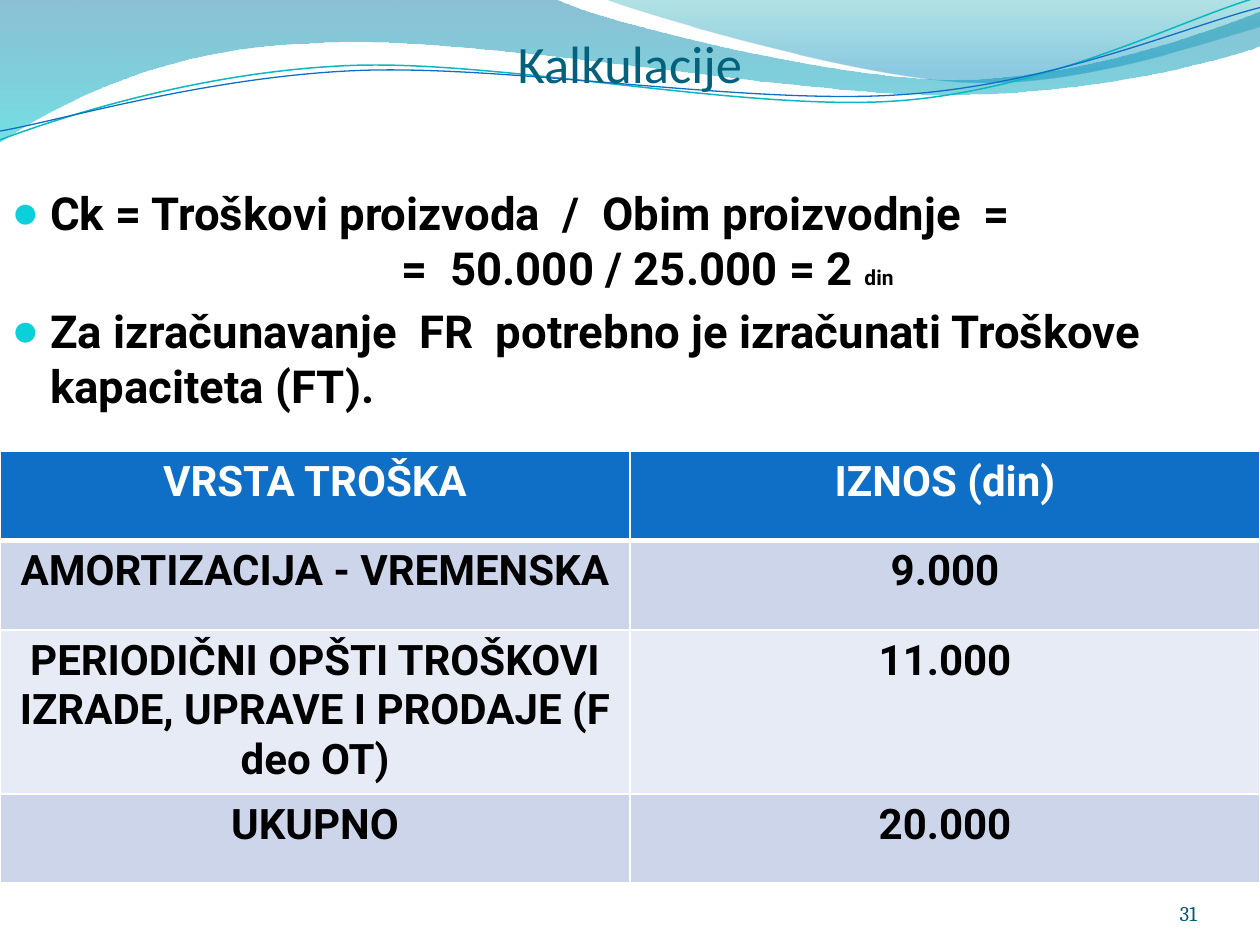
from math import cos, radians, sin

from lxml.etree import SubElement
from pptx import Presentation
from pptx.dml.color import RGBColor
from pptx.enum.text import MSO_ANCHOR, PP_ALIGN
from pptx.oxml.ns import qn
from pptx.util import Inches, Pt

UPPER_WAVE = [
    (0, 0), (4.4, -0.01),
    (4.76, 0.17, 6.64, 0.63, 7.58, 0.63), (8.53, 0.63, 9.58, 0.26, 10, 0.09),
    (10.01, 0.36),
    (9.83, 0.44, 8.7, 0.76, 7.46, 0.75), (6.22, 0.75, 3.82, 0.28, 2.57, 0.34),
    (1.29, 0.36, 0.46, 0.83, -0.01, 1.13),
]
RIGHT_WAVE = [
    (4.79, -0.01), (5.09, 0.11, 6.82, 0.62, 7.69, 0.65),
    (8.56, 0.69, 9.61, 0.32, 10, 0.21), (10, 0),
]
TEAL_STRAND = [
    (0, 1.11), (0.48, 0.93, 1.58, 0.57, 2.77, 0.52),
    (3.95, 0.47, 5.93, 0.89, 7.13, 0.8), (8.33, 0.71, 9.38, 0.15, 9.98, -0.02),
]
BLUE_STRAND = [
    (0, 1.04), (0.47, 0.96, 1.64, 0.61, 2.83, 0.56),
    (4.03, 0.51, 5.97, 0.84, 7.17, 0.75), (8.36, 0.67, 9.41, 0.21, 10, 0.06),
]
STRAND_CENTER = (4.99, 0.58)
STRAND_TILT = 2.7
COSTS = [
    ("VRSTA TROŠKA", "IZNOS (din)"),
    ("AMORTIZACIJA - VREMENSKA", "9.000"),
    ("PERIODIČNI OPŠTI TROŠKOVI IZRADE, UPRAVE I PRODAJE (F deo OT)", "11.000"),
    ("UKUPNO", "20.000"),
]
ROW_HEIGHT = 0.71
ROW_FILLS = ["0F6FC6", "CCD5EA", "E7EBF5", "CCD5EA"]


def color(value):
    return RGBColor.from_string(value)


def level(x, y):
    angle = radians(STRAND_TILT)
    center_x, center_y = STRAND_CENTER
    dx, dy = x - center_x, y - center_y
    return (center_x + dx * cos(angle) - dy * sin(angle),
            center_y + dx * sin(angle) + dy * cos(angle))


def add_curve(slide, segments, close, place=lambda x, y: (x, y)):
    points = [tuple(Inches(value) for value in place(*pair))
              for segment in segments for pair in zip(segment[::2], segment[1::2])]
    builder = slide.shapes.build_freeform(*points[0], scale=1.0)
    builder.add_line_segments(points[1:], close=close)
    curve = builder.convert_to_shape()
    curve.shadow.inherit = False
    lines = iter(list(curve._element.iter(qn("a:lnTo"))))
    for segment in segments[1:]:
        first = next(lines)
        if len(segment) == 6:
            first.tag = qn("a:cubicBezTo")
            for _ in range(2):
                line = next(lines)
                first.append(line[0])
                line.getparent().remove(line)
    return curve


def add_wave(slide, segments, stops):
    wave = add_curve(slide, segments, True)
    wave.line.fill.background()
    wave.fill.gradient()
    wave.fill.gradient_angle = 270
    for stop, (position, tint, _) in zip(wave.fill.gradient_stops, stops):
        stop.position = position
        stop.color.rgb = color(tint)
    tints = wave._element.spPr.iter(qn("a:srgbClr"))
    for tint, (_, _, opacity) in zip(tints, stops):
        SubElement(tint, qn("a:alpha"), val=str(opacity * 1000))


def add_strand(slide, segments, tint, width):
    strand = add_curve(slide, segments, False, level)
    strand.rotation = 360 - STRAND_TILT
    strand.fill.background()
    strand.line.color.rgb = color(tint)
    strand.line.width = Pt(width)


def add_run(paragraph, text, size, tint="000000", font="Roboto", bold=True):
    run = paragraph.add_run()
    run.text = text
    run.font.size = Pt(size)
    run.font.name = font
    run.font.bold = bold
    run.font.color.rgb = color(tint)


def add_text_frame(slide, left, top, width, height):
    frame = slide.shapes.add_textbox(
        Inches(left), Inches(top), Inches(width), Inches(height)).text_frame
    frame.word_wrap = True
    return frame


def add_label(slide, box, text, size, tint, font, align):
    frame = add_text_frame(slide, *box)
    frame.vertical_anchor = MSO_ANCHOR.BOTTOM
    frame.margin_left = frame.margin_right = 0
    frame.margin_top = frame.margin_bottom = 0
    paragraph = frame.paragraphs[0]
    paragraph.alignment = align
    add_run(paragraph, text, size, tint, font, False)


def indent(paragraph, left, first=0):
    properties = paragraph._p.get_or_add_pPr()
    properties.set("marL", str(Inches(left)))
    properties.set("indent", str(Inches(first)))
    return properties


def add_bullet(paragraph):
    paragraph.space_before = Pt(5.2)
    properties = indent(paragraph, 0.3, -0.3)
    bullet_color = SubElement(properties, qn("a:buClr"))
    SubElement(bullet_color, qn("a:srgbClr"), val="0BD0D9")
    SubElement(properties, qn("a:buSzPct"), val="95000")
    SubElement(properties, qn("a:buFont"), typeface="Calibri")
    SubElement(properties, qn("a:buChar"), char="●")


def add_calculation(slide):
    frame = add_text_frame(slide, 0, 1.42, 10, 6.08)
    formula = frame.paragraphs[0]
    add_bullet(formula)
    add_run(formula, "Ck = Troškovi proizvoda  /  Obim proizvodnje  =", 26)
    result = frame.add_paragraph()
    indent(result, 3.09)
    add_run(result, "=  50.000 / 25.000 = 2 ", 26)
    add_run(result, "din", 12)
    condition = frame.add_paragraph()
    add_bullet(condition)
    add_run(condition, "Za izračunavanje  FR  potrebno je izračunati "
                       "Troškove kapaciteta (FT).", 26)


def add_borders(cell, bottom_width, top_width):
    properties = cell._tc.get_or_add_tcPr()
    widths = {"a:lnL": 1, "a:lnR": 1, "a:lnT": top_width, "a:lnB": bottom_width}
    for position, (side, width) in enumerate(widths.items()):
        border = SubElement(properties, qn(side), w=str(Pt(width)))
        fill = SubElement(border, qn("a:solidFill"))
        SubElement(fill, qn("a:srgbClr"), val="FFFFFF")
        properties.insert(position, border)


def add_cost_table(slide):
    table = slide.shapes.add_table(
        len(COSTS), 2, 0, Inches(3.58), Inches(10),
        Inches(ROW_HEIGHT * len(COSTS))).table
    for index, (costs, tint) in enumerate(zip(COSTS, ROW_FILLS)):
        table.rows[index].height = Inches(ROW_HEIGHT)
        for column, text in enumerate(costs):
            cell = table.cell(index, column)
            cell.fill.solid()
            cell.fill.fore_color.rgb = color(tint)
            add_borders(cell, 3 if index == 0 else 1, 3 if index == 1 else 1)
            paragraph = cell.text_frame.paragraphs[0]
            paragraph.alignment = PP_ALIGN.CENTER
            add_run(paragraph, text, 24, "FFFFFF" if index == 0 else "000000")


def main():
    presentation = Presentation()
    presentation.slide_width = Inches(10)
    presentation.slide_height = Inches(7.5)
    slide = presentation.slides.add_slide(presentation.slide_layouts[6])
    add_wave(slide, UPPER_WAVE, [(0, "0074A1", 45), (1, "00C6CF", 55)])
    add_wave(slide, RIGHT_WAVE, [(0, "00A1A9", 30), (0.8, "008BBF", 45)])
    add_strand(slide, TEAL_STRAND, "0AB8BF", 0.85)
    add_strand(slide, BLUE_STRAND, "0F6FC6", 0.75)
    add_label(slide, (0, 0, 10, 0.75), "Kalkulacije", 30, "04617B",
              "Calibri", PP_ALIGN.CENTER)
    add_calculation(slide)
    add_label(slide, (8.67, 6.95, 0.83, 0.4), "31", 12, "045D75",
              "Cambria", PP_ALIGN.RIGHT)
    add_cost_table(slide)
    presentation.save("out.pptx")


if __name__ == "__main__":
    main()
